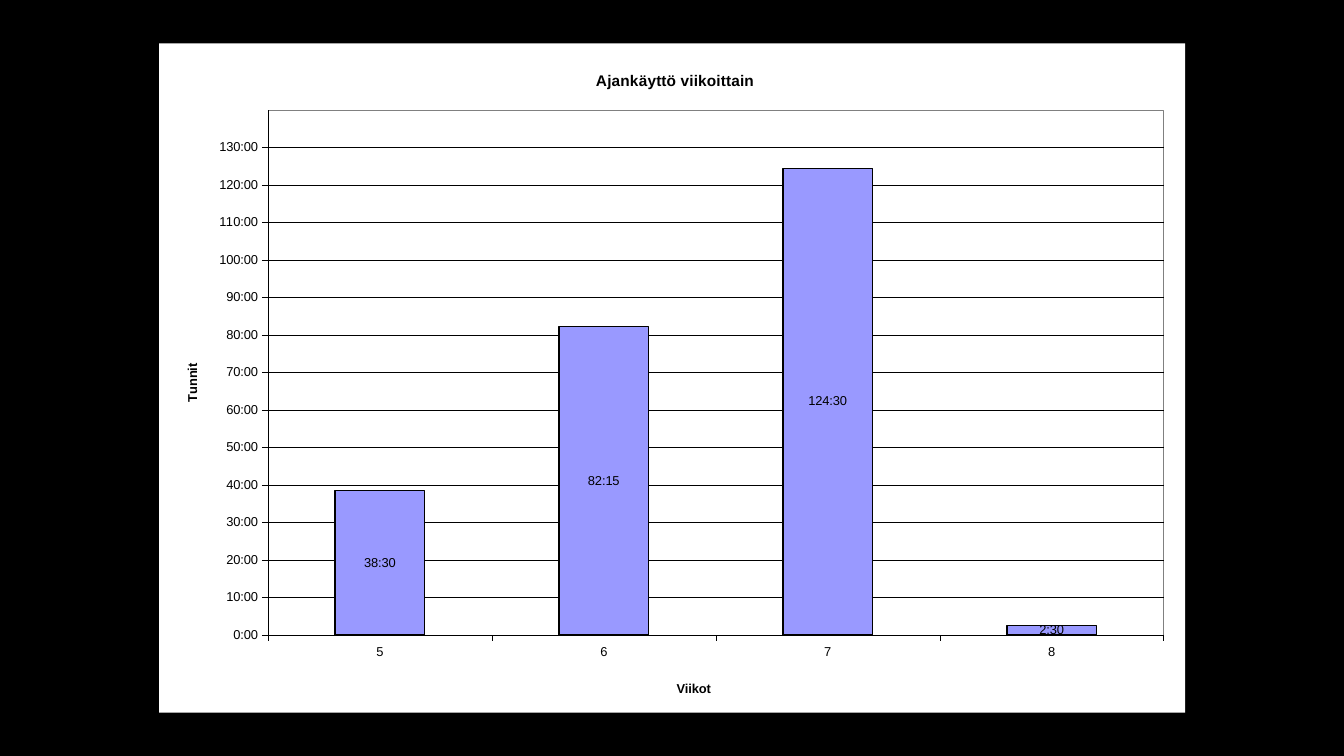
from lxml import etree
from pptx import Presentation
from pptx import util as u
from pptx.chart import data as cd
from pptx.dml.color import RGBColor
from pptx.enum import chart as ch
from pptx.oxml import parse_xml
from pptx.oxml.ns import nsdecls, qn

COLORS = {"black": "000000", "white": "FFFFFF", "bar": "9999FF", "frame": "808080"}
HOURS = {"5": 38.5, "6": 82.25, "7": 124.5, "8": 2.5}
TIME = "[h]:mm"


def style(font, size=9.2, bold=False):
    font.name, font.size, font.bold = "Arial", u.Pt(size), bold
    font.color.rgb = RGBColor.from_string(COLORS["black"])


def place(part, index, **pos):
    """Give a chart part a manual layout, in fractions of the chart."""
    for old in part.findall(qn("c:layout")):
        part.remove(old)
    layout = parse_xml(f"<c:layout {nsdecls('c')}><c:manualLayout/></c:layout>")
    for tag, val in pos.items():
        etree.SubElement(layout[0], qn(f"c:{tag}")).set("val", str(val))
    part.insert(index, layout)


# Slide
prs = Presentation()
prs.slide_width, prs.slide_height = u.Cm(33.87), u.Cm(19.05)
slide = prs.slides.add_slide(prs.slide_layouts[6])
back = slide.background.fill
back.solid()
back.fore_color.rgb = RGBColor.from_string(COLORS["black"])

# Chart: times are stored as fractions of a day
data = cd.CategoryChartData(number_format=TIME)
data.categories = list(HOURS)
data.add_series("Series 1", [round(h / 24, 4) for h in HOURS.values()])
chart = slide.shapes.add_chart(
    ch.XL_CHART_TYPE.COLUMN_STACKED, u.Cm(4.01), u.Cm(1.09),
    u.Cm(25.86), u.Cm(16.87), data).chart
chart.has_legend = False
style(chart.font)

# Axes
cat, val = chart.category_axis, chart.value_axis
for axis in (cat, val):
    axis.major_tick_mark = ch.XL_TICK_MARK.OUTSIDE
    axis.minor_tick_mark = ch.XL_TICK_MARK.NONE
    style(axis.tick_labels.font)
val.minimum_scale, val.maximum_scale = 0, round(140 / 24, 4)
val.major_unit = round(10 / 24, 6)
val.has_major_gridlines = True
val.tick_labels.number_format = TIME
val.tick_labels.number_format_is_linked = False
for line in (cat.format.line, val.format.line, val.major_gridlines.format.line):
    line.width = u.Pt(0.25)
    line.color.rgb = RGBColor.from_string(COLORS["black"])

# Titles
for owner, label, size, x, y in (
        (chart, "Ajankäyttö viikoittain", 11, 0.423, 0.036),
        (cat, "Viikot", 9.2, 0.502, 0.948),
        (val, "Tunnit", 9.2, 0.022, 0.475)):
    owner.has_title = True
    title = owner.chart_title if owner is chart else owner.axis_title
    title.text_frame.text = label
    style(title.text_frame.paragraphs[0].runs[0].font, size, True)
    place(title._element, 1, xMode="edge", yMode="edge", x=x, y=y)
val.axis_title.text_frame._txBody.bodyPr.set("rot", "-5400000")

# Bars
plot = chart.plots[0]
plot.gap_width, plot.overlap, plot.vary_by_categories = 150, 100, False
bars = plot.series[0].format
bars.fill.solid()
bars.fill.fore_color.rgb = RGBColor.from_string(COLORS["bar"])
bars.line.width = u.Pt(1)
bars.line.color.rgb = RGBColor.from_string(COLORS["black"])
labels = plot.series[0].data_labels
labels.show_value = True
labels.number_format, labels.number_format_is_linked = TIME, False
labels.position = ch.XL_LABEL_POSITION.CENTER
style(labels.font)

# Plot frame and white chart area
root = chart._chartSpace.find(qn("c:chart"))
area = root.find(qn("c:plotArea"))
place(area, 0, layoutTarget="inner", xMode="edge", yMode="edge",
      x=0.106, y=0.1, w=0.873, h=0.784)
shell = "<c:spPr {}>{}<a:ln w='3175'>{}</a:ln></c:spPr>"
solid = "<a:solidFill><a:srgbClr val='{}'/></a:solidFill>"
area.append(parse_xml(shell.format(
    nsdecls("c", "a"), "<a:noFill/>", solid.format(COLORS["frame"]))))
root.addnext(parse_xml(shell.format(
    nsdecls("c", "a"), solid.format(COLORS["white"]), "<a:noFill/>")))

prs.save("out.pptx")
